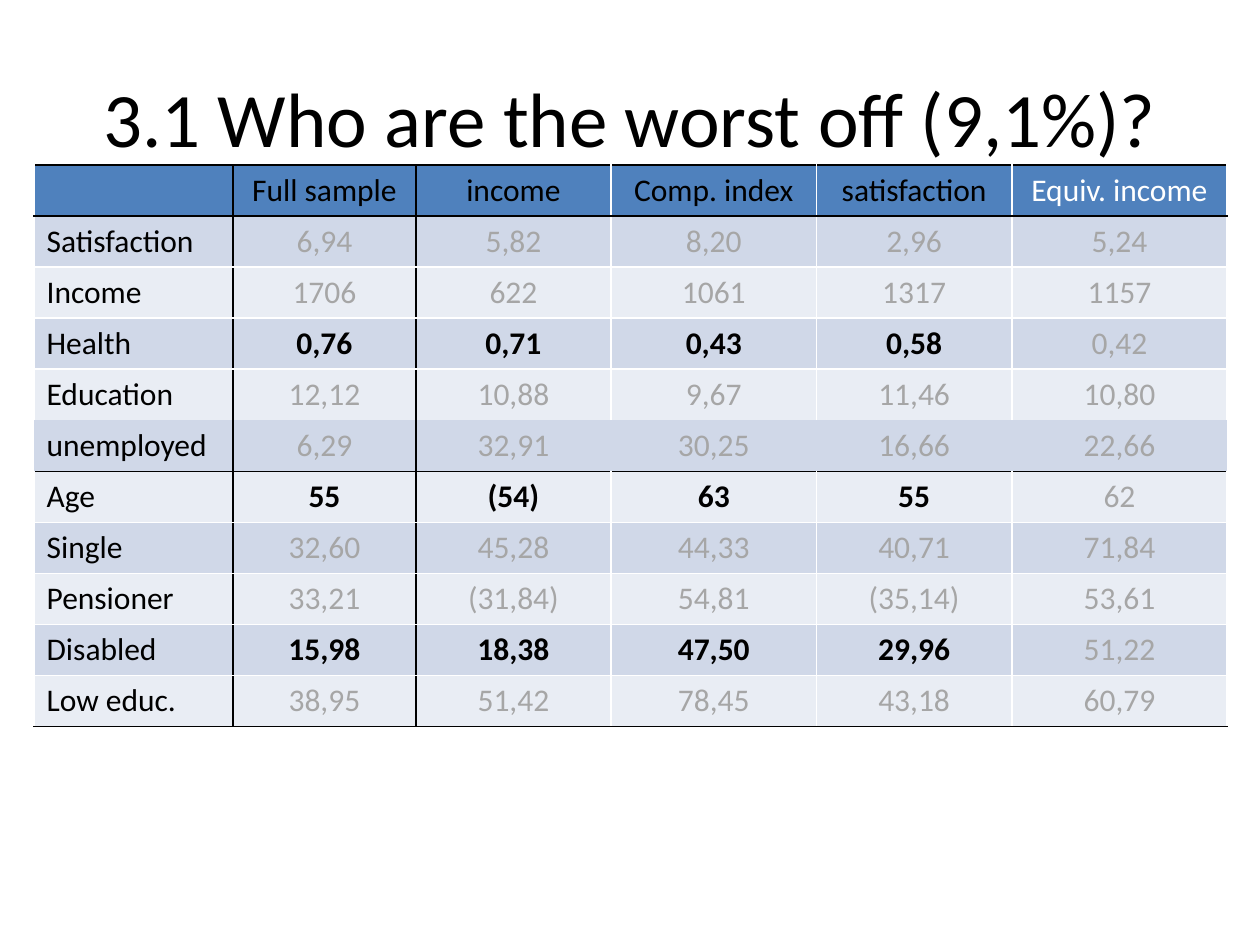
from lxml.etree import SubElement
from pptx import Presentation
from pptx.dml.color import RGBColor
from pptx.enum.text import MSO_ANCHOR, PP_ALIGN
from pptx.oxml.ns import qn
from pptx.util import Inches, Pt

COLORS = {
    "ink": "000000",
    "white": "FFFFFF",
    "muted": "A6A6A6",
    "header": "4F81BD",
    "dark_band": "D0D8E8",
    "light_band": "E9EDF4",
}
HEADINGS = ["", "Full sample", "income", "Comp. index", "satisfaction", "Equiv. income"]
MEASURES = [
    ["Satisfaction", "6,94", "5,82", "8,20", "2,96", "5,24"],
    ["Income", "1706", "622", "1061", "1317", "1157"],
    ["Health", "0,76", "0,71", "0,43", "0,58", "0,42"],
    ["Education", "12,12", "10,88", "9,67", "11,46", "10,80"],
    ["unemployed", "6,29", "32,91", "30,25", "16,66", "22,66"],
    ["Age", "55", "(54)", "63", "55", "62"],
    ["Single", "32,60", "45,28", "44,33", "40,71", "71,84"],
    ["Pensioner", "33,21", "(31,84)", "54,81", "(35,14)", "53,61"],
    ["Disabled", "15,98", "18,38", "47,50", "29,96", "51,22"],
    ["Low educ.", "38,95", "51,42", "78,45", "43,18", "60,79"],
]
COLUMN_WIDTHS = [1.58, 1.45, 1.55, 1.63, 1.55, 1.71]
HIGHLIGHTED = {"Health", "Age", "Disabled"}
BLACK_ROW_EDGES = {0, 1, 6, 11}
BLACK_COLUMN_EDGES = {1, 2}
OPEN_ROW = 5
LAST_COLUMN = len(HEADINGS) - 1


def style_text(paragraph, size, color, align, bold=False):
    paragraph.alignment = align
    font = paragraph.font
    font.name = "Calibri"
    font.size = Pt(size)
    font.bold = bold
    font.color.rgb = RGBColor.from_string(COLORS[color])


def row_edge_color(edge):
    if edge == OPEN_ROW:
        return None
    return "ink" if edge in BLACK_ROW_EDGES else "white"


def column_edge_color(edge, row):
    if edge in BLACK_COLUMN_EDGES:
        return "ink"
    return None if row == OPEN_ROW else "white"


def add_borders(cell, row, column):
    edges = {
        "a:lnL": column_edge_color(column, row),
        "a:lnR": column_edge_color(column + 1, row),
        "a:lnT": row_edge_color(row),
        "a:lnB": row_edge_color(row + 1),
    }
    properties = cell._tc.get_or_add_tcPr()
    for tag, color in edges.items():
        line = SubElement(properties, qn(tag), w=str(Pt(1)))
        if color is None:
            SubElement(line, qn("a:noFill"))
        else:
            fill = SubElement(line, qn("a:solidFill"))
            SubElement(fill, qn("a:srgbClr"), val=COLORS[color])


def fill_color(row):
    if row == 0:
        return "header"
    return "dark_band" if row % 2 else "light_band"


def text_style(label, row, column):
    if row == 0:
        return ("white" if column == LAST_COLUMN else "ink"), False
    if column == 0:
        return "ink", False
    if label in HIGHLIGHTED and column < LAST_COLUMN:
        return "ink", True
    return "muted", False


def add_title(slide, text):
    title = slide.shapes.add_textbox(Inches(0.5), Inches(0.3), Inches(9), Inches(1.25))
    frame = title.text_frame
    frame.word_wrap = True
    frame.vertical_anchor = MSO_ANCHOR.MIDDLE
    frame.text = text
    style_text(frame.paragraphs[0], 44, "ink", PP_ALIGN.CENTER)


def add_comparison_table(slide):
    rows = [HEADINGS] + MEASURES
    table = slide.shapes.add_table(
        len(rows), len(HEADINGS), Inches(0.27), Inches(1.31), Inches(9.47), Inches(4.46)
    ).table
    table.first_row = False
    table.horz_banding = False
    for column, width in zip(table.columns, COLUMN_WIDTHS):
        column.width = Inches(width)
    for row, values in enumerate(rows):
        for column, value in enumerate(values):
            cell = table.cell(row, column)
            cell.text = value
            add_borders(cell, row, column)
            cell.fill.solid()
            cell.fill.fore_color.rgb = RGBColor.from_string(COLORS[fill_color(row)])
            color, bold = text_style(values[0], row, column)
            align = PP_ALIGN.CENTER if column else PP_ALIGN.LEFT
            style_text(cell.text_frame.paragraphs[0], 18, color, align, bold)


def main():
    deck = Presentation()
    deck.slide_width = Inches(10)
    deck.slide_height = Inches(7.5)
    slide = deck.slides.add_slide(deck.slide_layouts[6])
    add_title(slide, "3.1 Who are the worst off (9,1%)?")
    add_comparison_table(slide)
    deck.save("out.pptx")


if __name__ == "__main__":
    main()
